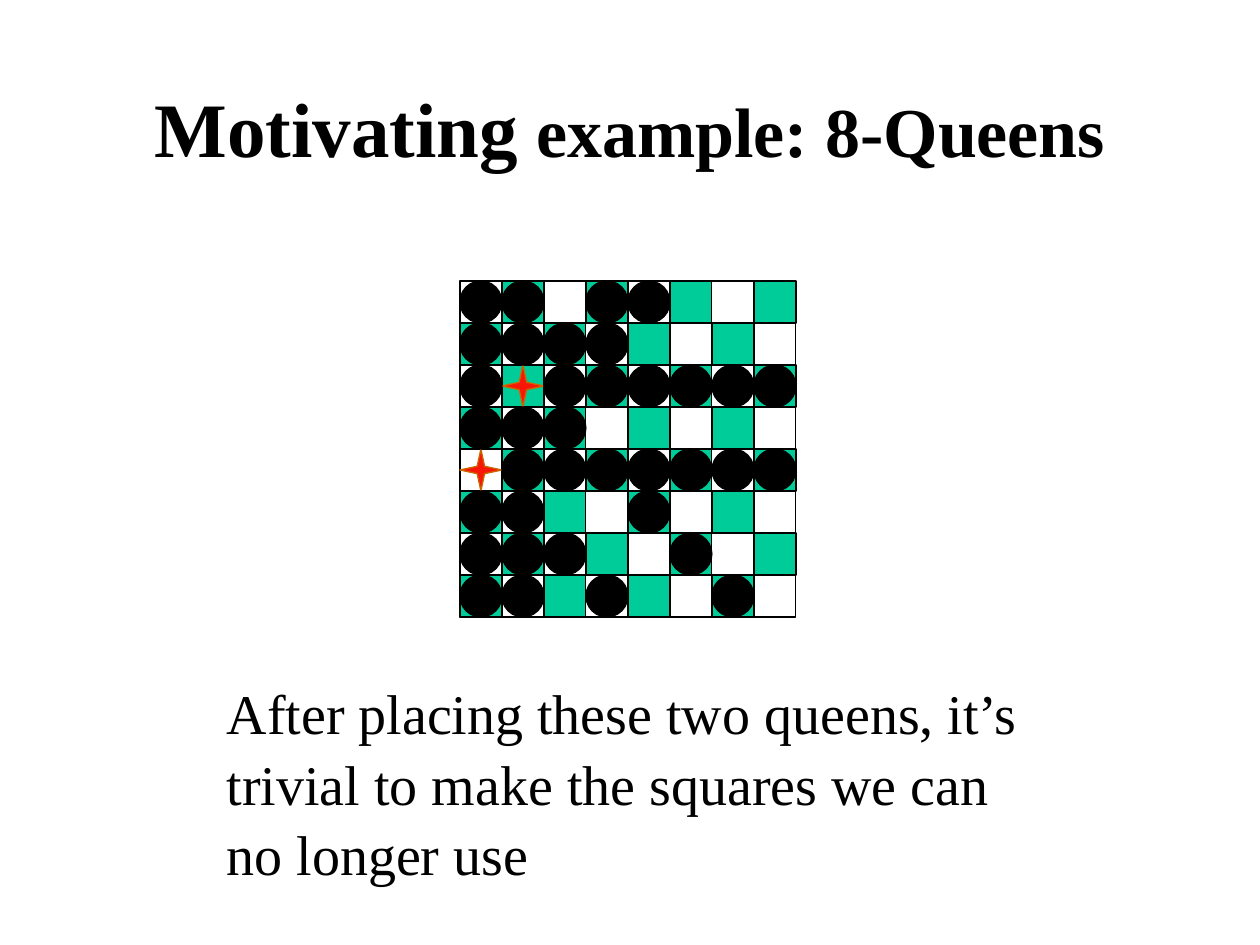
from dataclasses import dataclass
from itertools import product
from typing import NamedTuple

from pptx import Presentation
from pptx.dml.color import RGBColor
from pptx.enum.shapes import MSO_SHAPE as Preset
from pptx.enum.text import MSO_ANCHOR as Anchor, MSO_AUTO_SIZE as AutoSize, PP_ALIGN as Align
from pptx.shapes.autoshape import Shape
from pptx.shapes.shapetree import GroupShapes, SlideShapes
from pptx.slide import Slide
from pptx.text.text import Font
from pptx.util import Inches, Pt


@dataclass(frozen=True)
class Theme:
    font: str = "Times New Roman"
    ink: str = "000000"
    green: str = "00CC99"
    queen: str = "F81706"
    queen_edge: str = "CC6600"
    title_large: int = 44
    title_small: int = 40
    caption: int = 32
    line: float = 0.75


class Square(NamedTuple):
    row: int
    column: int

    def is_dark(self) -> bool:
        return (self.row + self.column) % 2 == 1

    def is_attacked_by(self, queen: "Square") -> bool:
        rows = abs(self.row - queen.row)
        columns = abs(self.column - queen.column)
        return rows == 0 or columns == 0 or rows == columns


@dataclass(frozen=True)
class Piece:
    preset: Preset
    fill: str | None
    line: str


THEME = Theme()
FRAME = Piece(Preset.RECTANGLE, None, THEME.ink)
DARK_SQUARE = Piece(Preset.RECTANGLE, THEME.green, THEME.ink)
QUEEN = Piece(Preset.STAR_4_POINT, THEME.queen, THEME.queen_edge)
BLOCKED = Piece(Preset.OVAL, THEME.ink, THEME.ink)

BOARD_LEFT, BOARD_TOP = 3.65, 2.23
COUNT = 8
CELL = 1 / 3
SQUARES = [Square(row, column) for row, column in product(range(COUNT), repeat=2)]
QUEENS = [Square(2, 1), Square(4, 0)]


def draw_piece(
    shapes: SlideShapes | GroupShapes, piece: Piece, square: Square, cells: int = 1
) -> Shape:
    shape = shapes.add_shape(
        piece.preset,
        Inches(BOARD_LEFT + square.column * CELL),
        Inches(BOARD_TOP + square.row * CELL),
        Inches(cells * CELL),
        Inches(cells * CELL),
    )
    shape.shadow.inherit = False
    if piece.fill is None:
        shape.fill.background()
    else:
        shape.fill.solid()
        shape.fill.fore_color.rgb = RGBColor.from_string(piece.fill)
    shape.line.color.rgb = RGBColor.from_string(piece.line)
    shape.line.width = Pt(THEME.line)
    return shape


def format_font(font: Font, size: int, bold: bool = False) -> None:
    font.name = THEME.font
    font.size = Pt(size)
    font.bold = bold
    font.color.rgb = RGBColor.from_string(THEME.ink)


def draw_title(slide: Slide) -> None:
    title = slide.shapes.title
    title.left, title.top = Inches(0), Inches(0.38)
    title.width, title.height = Inches(10), Inches(1.25)
    text_frame = title.text_frame
    text_frame.auto_size = AutoSize.NONE
    text_frame.vertical_anchor = Anchor.MIDDLE
    paragraph = text_frame.paragraphs[0]
    paragraph.alignment = Align.CENTER
    for text, size in (
        ("Motivating", THEME.title_large),
        (" example: 8-Queens", THEME.title_small),
    ):
        run = paragraph.add_run()
        run.text = text
        format_font(run.font, size, bold=True)


def draw_board(slide: Slide) -> None:
    board = slide.shapes.add_group_shape().shapes
    draw_piece(board, FRAME, Square(0, 0), COUNT)
    for square in SQUARES:
        if square.is_dark():
            draw_piece(board, DARK_SQUARE, square)

    for queen in QUEENS:
        draw_piece(slide.shapes, QUEEN, queen).adjustments[0] = 0.125

    blocked = slide.shapes.add_group_shape().shapes
    for square in SQUARES:
        if square not in QUEENS and any(map(square.is_attacked_by, QUEENS)):
            draw_piece(blocked, BLOCKED, square)


def draw_caption(slide: Slide) -> None:
    caption = slide.shapes.add_textbox(Inches(1.7), Inches(5.31), Inches(6.79), Inches(1.72))
    text_frame = caption.text_frame
    text_frame.word_wrap = True
    text_frame.auto_size = AutoSize.SHAPE_TO_FIT_TEXT
    text_frame.text = (
        "After placing these two queens, it’s trivial to make "
        "the squares we can no longer use"
    )
    paragraph = text_frame.paragraphs[0]
    paragraph.line_spacing = 1.05
    format_font(paragraph.runs[0].font, THEME.caption)


def main() -> None:
    presentation = Presentation()
    presentation.slide_width = Inches(10)
    presentation.slide_height = Inches(7.5)
    slide = presentation.slides.add_slide(presentation.slide_layouts.get_by_name("Title Only"))
    draw_title(slide)
    draw_board(slide)
    draw_caption(slide)
    presentation.save("out.pptx")


if __name__ == "__main__":
    main()
